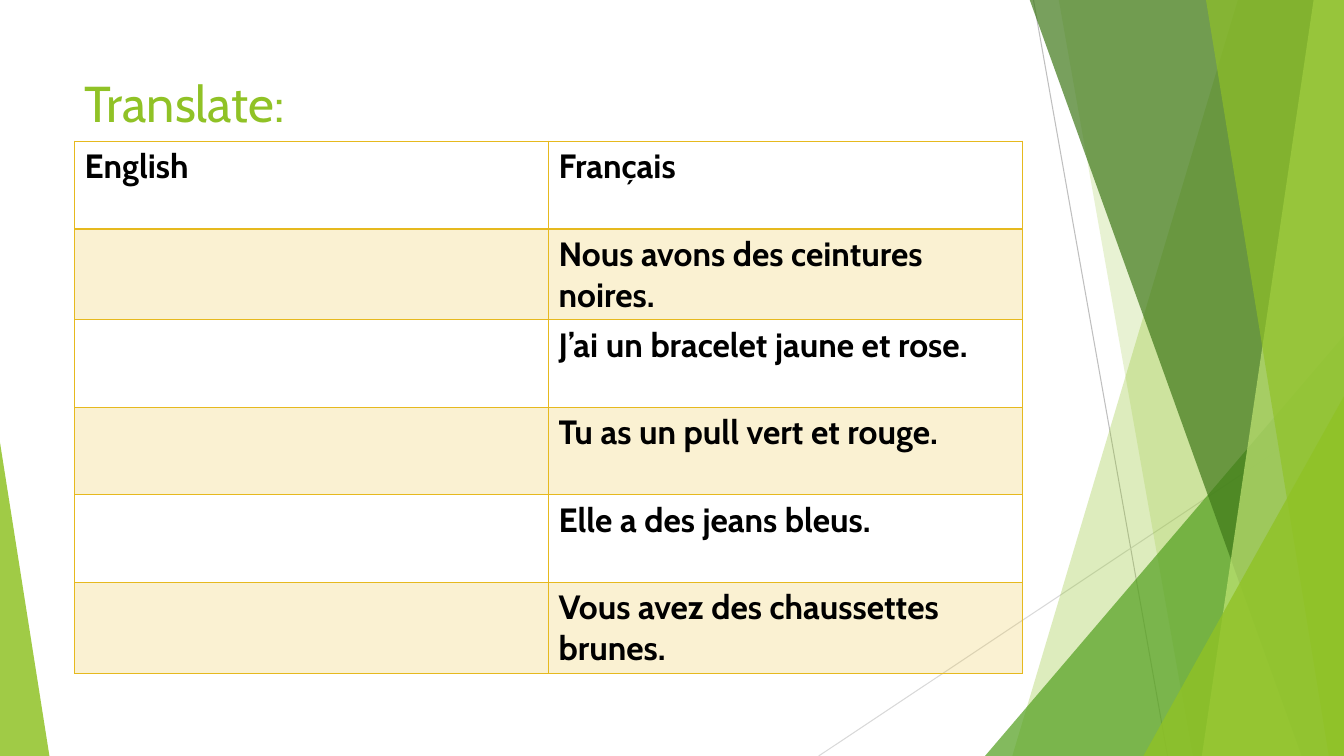
from lxml.etree import SubElement
from pptx import Presentation
from pptx.dml.color import RGBColor
from pptx.enum.shapes import MSO_CONNECTOR, MSO_SHAPE
from pptx.enum.text import MSO_ANCHOR
from pptx.oxml.ns import qn
from pptx.util import Inches, Pt

FONT = "Cabin"
BLACK = RGBColor(0x00, 0x00, 0x00)
LIME = RGBColor(0x90, 0xC2, 0x26)
GREEN = RGBColor(0x54, 0xA0, 0x21)
DARK_GREEN = RGBColor(0x3F, 0x78, 0x19)
PALE_GREEN = RGBColor(0xC0, 0xE4, 0x74)
GOLD = RGBColor(0xE6, 0xB9, 0x1E)
GREY = RGBColor(0xBF, 0xBF, 0xBF)
LIGHT_GREY = RGBColor(0xD9, 0xD9, 0xD9)

WIDTH, HEIGHT = 13.33, 7.5
TOP = -0.01

TITLE = "Translate:"
ROWS = [
    ("English", "Français"),
    ("", "Nous avons des ceintures noires."),
    ("", "J’ai un bracelet jaune et rose."),
    ("", "Tu as un pull vert et rouge."),
    ("", "Elle a des jeans bleus."),
    ("", "Vous avez des chaussettes brunes."),
]
TABLE_LEFT, TABLE_TOP = 0.74, 1.4
COLUMN_WIDTH, ROW_HEIGHT = 4.7, 0.87

# start x, start y, end x, end y, colour
LINES = [
    (10.25, 0, 11.58, HEIGHT, GREY),
    (WIDTH, 4.03, 8.12, HEIGHT, LIGHT_GREY),
]
# Bands reach the right edge: top-left x, bottom-left x, colour, opacity in percent
# Triangles stand on the bottom edge: left, top, width, apex position, colour, opacity
FACETS = [
    ("band", (12.28, 10.04), LIME, 30),
    ("band", (10.5, 11.83), LIME, 20),
    ("triangle", (9.77, 3.33, 3.56, 1), GREEN, 72),
    ("band", (10.21, 12.91), DARK_GREEN, 70),
    ("band", (13.03, 11.92), PALE_GREEN, 70),
    ("band", (11.96, 13.18), LIME, 65),
    ("triangle", (11.34, 3.93, 1.99, 1), LIME, 80),
    ("triangle", (0, 4.39, 0.49, 0), LIME, 85),
]


def fill_translucent(fill, properties, color, opacity):
    fill.solid()
    fill.fore_color.rgb = color
    color_element = properties.find(qn("a:solidFill"))[0]
    SubElement(color_element, qn("a:alpha"), val=str(opacity * 1000))


def add_band(shapes, top_x, bottom_x):
    builder = shapes.build_freeform(Inches(top_x), Inches(TOP))
    corners = [(WIDTH, TOP), (WIDTH, HEIGHT), (bottom_x, HEIGHT)]
    builder.add_line_segments([(Inches(x), Inches(y)) for x, y in corners])
    return builder.convert_to_shape()


def add_triangle(shapes, left, top, width, apex):
    triangle = shapes.add_shape(
        MSO_SHAPE.ISOSCELES_TRIANGLE,
        Inches(left), Inches(top), Inches(width), Inches(HEIGHT - top),
    )
    triangle.adjustments[0] = apex
    return triangle


def add_decoration(shapes):
    for start_x, start_y, end_x, end_y, color in LINES:
        line = shapes.add_connector(
            MSO_CONNECTOR.STRAIGHT,
            Inches(start_x), Inches(start_y), Inches(end_x), Inches(end_y),
        )
        line.line.color.rgb = color
        line.line.width = Pt(0.75)
        SubElement(line._element.spPr, qn("a:effectLst"))
    builders = {"band": add_band, "triangle": add_triangle}
    for kind, geometry, color, opacity in FACETS:
        facet = builders[kind](shapes, *geometry)
        facet.shadow.inherit = False
        facet.line.fill.background()
        fill_translucent(facet.fill, facet._element.spPr, color, opacity)


def add_run(paragraph, text, size, color, bold=False):
    run = paragraph.add_run()
    run.text = text
    font = run.font
    font.name, font.size, font.bold = FONT, Pt(size), bold
    font.color.rgb = color


def add_title(shapes):
    box = shapes.add_textbox(Inches(TABLE_LEFT), Inches(0.67), Inches(9.4), Inches(1.44))
    frame = box.text_frame
    frame.word_wrap = True
    frame.vertical_anchor = MSO_ANCHOR.TOP
    add_run(frame.paragraphs[0], TITLE, 36, LIME)


def add_border(properties, side, points):
    border = SubElement(properties, qn(f"a:ln{side}"), w=str(Pt(points)))
    fill = SubElement(border, qn("a:solidFill"))
    SubElement(fill, qn("a:srgbClr"), val=str(GOLD))


def add_translation_table(shapes):
    table = shapes.add_table(
        len(ROWS), 2, Inches(TABLE_LEFT), Inches(TABLE_TOP),
        Inches(2 * COLUMN_WIDTH), Inches(len(ROWS) * ROW_HEIGHT),
    ).table
    table.first_row = table.horz_banding = False
    for column in table.columns:
        column.width = Inches(COLUMN_WIDTH)
    for row_index, texts in enumerate(ROWS):
        table.rows[row_index].height = Inches(ROW_HEIGHT)
        for column_index, text in enumerate(texts):
            cell = table.cell(row_index, column_index)
            properties = cell._tc.get_or_add_tcPr()
            header_edge = {0: "B", 1: "T"}.get(row_index)
            for side in "LRTB":
                add_border(properties, side, 2 if side == header_edge else 1)
            if row_index % 2:
                fill_translucent(cell.fill, properties, GOLD, 20)
            else:
                cell.fill.background()
            if text:
                add_run(cell.text_frame.paragraphs[0], text, 24, BLACK, bold=True)


def main():
    presentation = Presentation()
    presentation.slide_width = Inches(WIDTH)
    presentation.slide_height = Inches(HEIGHT)
    slide = presentation.slides.add_slide(presentation.slide_layouts[6])
    add_decoration(slide.shapes)
    add_title(slide.shapes)
    add_translation_table(slide.shapes)
    presentation.save("out.pptx")


if __name__ == "__main__":
    main()
